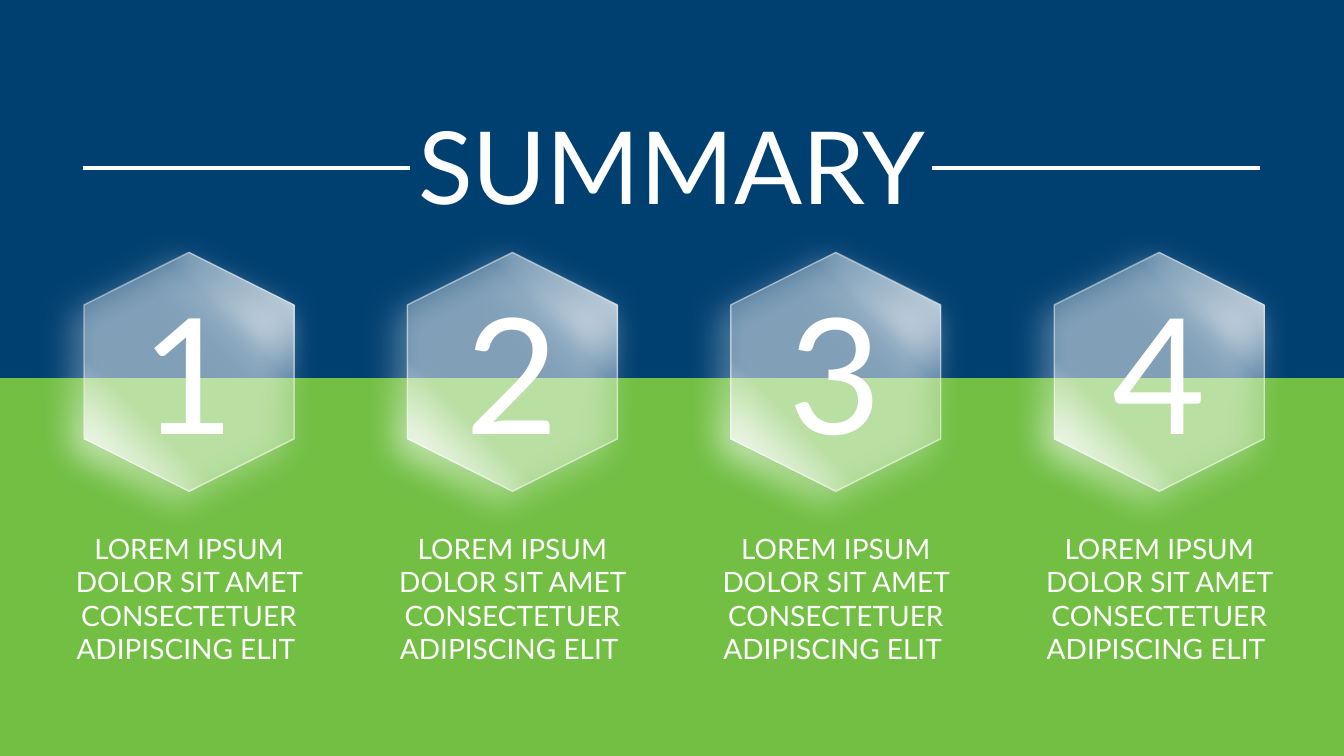
from lxml import etree
from pptx import Presentation
from pptx.dml.color import RGBColor
from pptx.enum.shapes import MSO_AUTO_SHAPE_TYPE, MSO_CONNECTOR_TYPE
from pptx.enum.text import MSO_AUTO_SIZE, PP_ALIGN
from pptx.oxml import parse_xml
from pptx.oxml.ns import qn
from pptx.util import Pt

RECT = MSO_AUTO_SHAPE_TYPE.RECTANGLE
HEXAGON = MSO_AUTO_SHAPE_TYPE.HEXAGON
STRAIGHT = MSO_CONNECTOR_TYPE.STRAIGHT
CENTER = PP_ALIGN.CENTER
GROW = MSO_AUTO_SIZE.SHAPE_TO_FIT_TEXT

COLORS = {"blue": "004071", "green": "72BF44", "white": "FFFFFF"}
FONT = "Lato"
NS = 'xmlns:a="http://schemas.openxmlformats.org/drawingml/2006/main"'
WIDTH, HEIGHT = 960, 540
CARD_STEP = 231
GLASS_STOPS = [(0, 100), (30, 30), (70, 30), (100, 100)]
CAPTION = ["LOREM IPSUM", "DOLOR SIT AMET CONSECTETUER ADIPISCING ELIT "]


def rgb(name):
    return RGBColor.from_string(COLORS[name])


def add_band(shapes, top, height, color):
    sp = shapes.add_shape(RECT, 0, Pt(top), Pt(WIDTH), Pt(height))
    sp.shadow.inherit = False
    sp.fill.solid()
    sp.fill.fore_color.rgb = rgb(color)
    sp.line.fill.background()


def add_text(shapes, box, lines, size):
    tf = shapes.add_textbox(*(Pt(v) for v in box)).text_frame
    tf.word_wrap = True
    tf.auto_size = GROW
    p = tf.paragraphs[0]
    p.alignment = CENTER
    for i, line in enumerate(lines):
        if i:
            p.add_line_break()
        r = p.add_run()
        r.text = line
        r.font.size = Pt(size)
        r.font.name = FONT
        r.font.color.rgb = rgb("white")


def add_rule(shapes, left, right, y):
    line = shapes.add_connector(STRAIGHT, Pt(left), Pt(y), Pt(right), Pt(y))
    line.line.color.rgb = rgb("white")
    line.line.width = Pt(3)
    etree.SubElement(line._element.spPr, qn("a:effectLst"))


def glass_fill():
    stops = "".join(
        f'<a:gs pos="{pos * 1000}"><a:srgbClr val="{COLORS["white"]}">'
        f'<a:alpha val="{alpha * 1000}"/></a:srgbClr></a:gs>'
        for pos, alpha in GLASS_STOPS)
    return parse_xml(f'<a:gradFill {NS} rotWithShape="1"><a:gsLst>{stops}</a:gsLst>'
                     '<a:lin ang="2700000" scaled="0"/></a:gradFill>')


def glow():
    return parse_xml(f'<a:outerShdw {NS} blurRad="{Pt(24)}" dist="{Pt(11)}" dir="8100000" '
                     f'algn="ctr" rotWithShape="0"><a:srgbClr val="{COLORS["white"]}"/>'
                     '</a:outerShdw>')


def add_glass_hexagon(shapes, left, top, width, height):
    sp = shapes.add_shape(HEXAGON, Pt(left), Pt(top), Pt(width), Pt(height))
    sp.rotation = 90
    sp.fill.background()
    sp.line.color.rgb = rgb("white")
    sp.line.width = Pt(1)
    sp.shadow.inherit = False
    spPr = sp._element.spPr
    spPr.replace(spPr.find(qn("a:noFill")), glass_fill())
    line_color = spPr.find(qn("a:ln")).find(".//" + qn("a:srgbClr"))
    etree.SubElement(line_color, qn("a:alpha")).set("val", "50000")
    spPr.find(qn("a:effectLst")).append(glow())


def add_card(slide, index):
    shapes = slide.shapes.add_group_shape().shapes
    x = index * CARD_STEP
    add_text(shapes, (x + 23.8, 375.8, 222.5, 104.4), CAPTION, 20)
    add_glass_hexagon(shapes, x + 49.7, 190.6, 170.6, 150)
    add_text(shapes, (x + 49.7, 192.2, 170, 147), [str(index + 1)], 115)


def main():
    prs = Presentation()
    prs.slide_width, prs.slide_height = Pt(WIDTH), Pt(HEIGHT)
    slide = prs.slides.add_slide(prs.slide_layouts[6])
    add_band(slide.shapes, 0, 330, "blue")
    add_band(slide.shapes, 270, 270, "green")
    for index in range(4):
        add_card(slide, index)
    for left in (59.2, 666):
        add_rule(slide.shapes, left, left + 234, 119.8)
    add_text(slide.shapes, (0, 70.6, WIDTH, 94.3), ["SUMMARY"], 72)
    prs.save("out.pptx")


if __name__ == "__main__":
    main()
